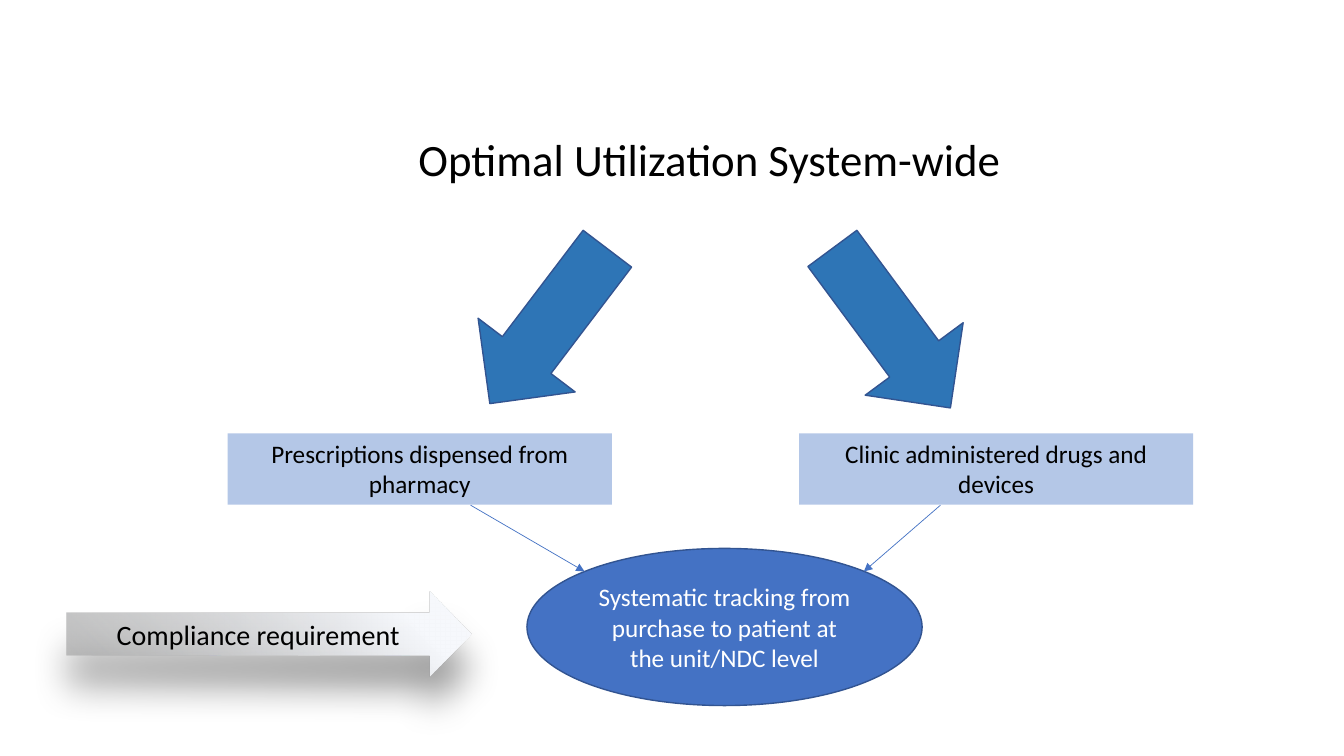
from dataclasses import dataclass
from typing import Optional

from lxml import etree
from pptx import Presentation
from pptx.dml.color import RGBColor
from pptx.enum.shapes import MSO_CONNECTOR, MSO_SHAPE
from pptx.enum.text import MSO_ANCHOR as Anchor, MSO_AUTO_SIZE as AutoSize, PP_ALIGN as Align
from pptx.oxml import parse_xml
from pptx.oxml.ns import nsdecls, qn
from pptx.util import Cm, Pt

FONT = "Calibri"
BLACK = RGBColor(0x00, 0x00, 0x00)
WHITE = RGBColor(0xFF, 0xFF, 0xFF)
BLUE = RGBColor(0x44, 0x72, 0xC4)
ARROW_BLUE = RGBColor(0x2E, 0x75, 0xB6)
PALE_BLUE = RGBColor(0xB4, 0xC7, 0xE7)
OUTLINE = RGBColor(0x32, 0x54, 0x91)

FADE = f"""<a:gradFill {nsdecls('a')} rotWithShape="1"><a:gsLst>
<a:gs pos="18000"><a:srgbClr val="F6F8FC"/></a:gs>
<a:gs pos="100000"><a:srgbClr val="A5A5A5"><a:alpha val="71000"/></a:srgbClr></a:gs>
</a:gsLst><a:path path="circle"><a:fillToRect l="100000" b="100000"/></a:path></a:gradFill>"""

SHADOW = f"""<a:outerShdw {nsdecls('a')} blurRad="{Pt(26)}" dist="{Pt(24)}" dir="5400000"
algn="t" rotWithShape="0"><a:srgbClr val="000000"><a:alpha val="39000"/></a:srgbClr></a:outerShdw>"""


@dataclass
class Block:
    kind: MSO_SHAPE
    left: float
    top: float
    width: float
    height: float
    fill: Optional[RGBColor] = None
    line: Optional[RGBColor] = None
    rotation: float = 0
    text: str = ""
    size: int = 18
    color: RGBColor = BLACK
    anchor: Anchor = Anchor.MIDDLE


@dataclass
class Link:
    x1: float
    y1: float
    x2: float
    y2: float


BLOCKS = [
    Block(MSO_SHAPE.DOWN_ARROW, 12.29, 5.77, 3.07, 4.9, ARROW_BLUE, OUTLINE, 37.2),
    Block(MSO_SHAPE.DOWN_ARROW, 20.93, 5.77, 3.07, 5, ARROW_BLUE, OUTLINE, 323.5),
    Block(MSO_SHAPE.RECTANGLE, 5.74, 10.92, 9.68, 1.8, PALE_BLUE,
          text="Prescriptions dispensed from pharmacy", anchor=Anchor.TOP),
    Block(MSO_SHAPE.RECTANGLE, 20.14, 10.92, 9.93, 1.8, PALE_BLUE,
          text="Clinic administered drugs and devices", anchor=Anchor.TOP),
    Block(MSO_SHAPE.OVAL, 13.28, 13.82, 9.96, 3.96, BLUE, OUTLINE,
          text="Systematic tracking from purchase to patient at the unit/NDC level",
          color=WHITE),
]
LINKS = [Link(23.7, 12.73, 21.77, 14.4), Link(11.86, 12.73, 14.73, 14.4)]
COMPLIANCE = Block(MSO_SHAPE.RIGHT_ARROW, 1.68, 14.91, 10.19, 2.13,
                   text="Compliance requirement", size=20)


def write(sp, text: str, size: int, color: RGBColor, anchor: Anchor) -> None:
    tf = sp.text_frame
    tf.text = text
    tf.word_wrap = True
    tf.auto_size = AutoSize.NONE
    tf.vertical_anchor = anchor
    p = tf.paragraphs[0]
    p.alignment = Align.CENTER
    p.font.name = FONT
    p.font.size = Pt(size)
    p.font.color.rgb = color


def place(sp, left: float, top: float, width: float, height: float) -> None:
    sp.left, sp.top, sp.width, sp.height = Cm(left), Cm(top), Cm(width), Cm(height)


def add_block(slide, block: Block):
    sp = slide.shapes.add_shape(block.kind, 0, 0, 0, 0)
    place(sp, block.left, block.top, block.width, block.height)
    sp.rotation = block.rotation
    sp.shadow.inherit = False
    if block.fill is None:
        sp.fill.background()
    else:
        sp.fill.solid()
        sp.fill.fore_color.rgb = block.fill
    if block.line is None:
        sp.line.fill.background()
    else:
        sp.line.color.rgb = block.line
        sp.line.width = Pt(1)
    if block.text:
        write(sp, block.text, block.size, block.color, block.anchor)
    return sp


def add_link(slide, link: Link) -> None:
    cxn = slide.shapes.add_connector(
        MSO_CONNECTOR.STRAIGHT, Cm(link.x1), Cm(link.y1), Cm(link.x2), Cm(link.y2))
    cxn.line.color.rgb = BLUE
    cxn.line.width = Pt(0.5)
    props = cxn._element.spPr
    etree.SubElement(props.find(qn("a:ln")), qn("a:tailEnd"), type="triangle")
    etree.SubElement(props, qn("a:effectLst"))


def add_compliance(slide) -> None:
    props = add_block(slide, COMPLIANCE)._element.spPr
    props.replace(props.find(qn("a:noFill")), parse_xml(FADE))
    props.find(qn("a:effectLst")).append(parse_xml(SHADOW))


def main() -> None:
    prs = Presentation()
    prs.slide_width, prs.slide_height = Cm(33.87), Cm(19.05)
    slide = prs.slides.add_slide(prs.slide_layouts[5])
    title = slide.shapes.title
    place(title, 6.5, 3.18, 22.76, 2.49)
    write(title, "Optimal Utilization System-wide", 32, BLACK, Anchor.TOP)
    for block in BLOCKS:
        add_block(slide, block)
    for link in LINKS:
        add_link(slide, link)
    add_compliance(slide)
    prs.save("out.pptx")


if __name__ == "__main__":
    main()
